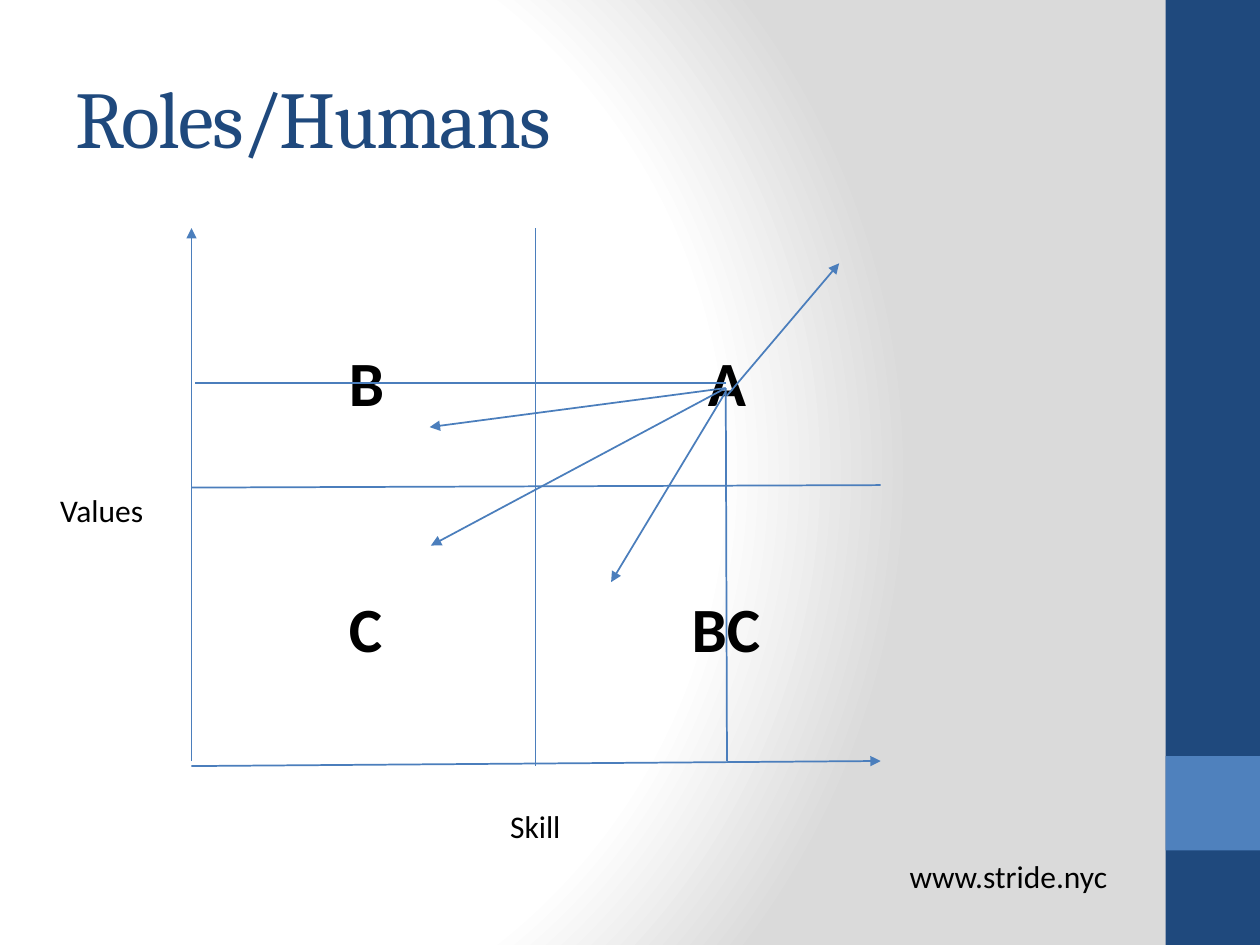
"""Build the Roles/Humans slide: a skill and values quadrant chart."""
import pptx
import pptx.dml.color
import pptx.enum.shapes
import pptx.enum.text
import pptx.oxml
import pptx.oxml.ns
import pptx.util
from lxml import etree

Inches = pptx.util.Inches
RGBColor = pptx.dml.color.RGBColor
qn = pptx.oxml.ns.qn

NAVY = RGBColor(0x1F, 0x49, 0x7D)
BLUE = RGBColor(0x4F, 0x81, 0xBD)
LINE = RGBColor(0x4B, 0x7E, 0xBC)
BLACK = RGBColor(0, 0, 0)
WHITE = RGBColor(0xFF, 0xFF, 0xFF)
GREY = RGBColor(0xDA, 0xDA, 0xDA)


class SlideBuilder:
    heading_font = "Cambria"
    body_font = "Calibri"

    def __init__(self, deck):
        self.slide = deck.slides.add_slide(deck.slide_layouts[5])
        self.shapes = self.slide.shapes

    def background(self, stops):
        self.slide.background.fill.gradient()
        gradient = self.slide.element.find(".//" + qn("a:gradFill"))
        stop_xml = "".join(
            f'<a:gs pos="{percent * 1000}"><a:srgbClr val="{color}"/></a:gs>'
            for percent, color in stops
        )
        radial = pptx.oxml.parse_xml(
            f'<a:gradFill {pptx.oxml.ns.nsdecls("a")} rotWithShape="1">'
            f"<a:gsLst>{stop_xml}</a:gsLst>"
            '<a:path path="circle">'
            '<a:fillToRect l="20000" t="50000" r="100000" b="50000"/>'
            "</a:path></a:gradFill>"
        )
        gradient.getparent().replace(gradient, radial)

    def bar(self, left, top, width, height, color):
        kind = pptx.enum.shapes.MSO_SHAPE.RECTANGLE
        shape = self.shapes.add_shape(
            kind, Inches(left), Inches(top), Inches(width), Inches(height)
        )
        shape.shadow.inherit = False
        shape.fill.solid()
        shape.fill.fore_color.rgb = color
        shape.line.fill.background()

    def span(self, para, text, font, size, color, bold=False):
        span = para.add_run()
        span.text = text
        span.font.name = font
        span.font.size = pptx.util.Pt(size)
        span.font.color.rgb = color
        span.font.bold = bold
        return span

    def title(self, text, left, top, width, height):
        box = self.shapes.title
        box.left, box.top = Inches(left), Inches(top)
        box.width, box.height = Inches(width), Inches(height)
        frame = box.text_frame
        frame.vertical_anchor = pptx.enum.text.MSO_ANCHOR.MIDDLE
        para = frame.paragraphs[0]
        para.alignment = pptx.enum.text.PP_ALIGN.LEFT
        span = self.span(para, text, self.heading_font, 46, NAVY)
        span._r.get_or_add_rPr().set("spc", "-100")

    def label(self, text, left, top, width, height=0.4, size=18, bold=False):
        box = self.shapes.add_textbox(
            Inches(left), Inches(top), Inches(width), Inches(height)
        )
        frame = box.text_frame
        frame.word_wrap = False
        frame.auto_size = pptx.enum.text.MSO_AUTO_SIZE.SHAPE_TO_FIT_TEXT
        self.span(frame.paragraphs[0], text, self.body_font, size, BLACK, bold)

    def line(self, start, end, arrow=False, shapes=None):
        connector = (shapes or self.shapes).add_connector(
            pptx.enum.shapes.MSO_CONNECTOR.STRAIGHT,
            *(Inches(value) for value in (*start, *end)),
        )
        connector.line.color.rgb = LINE
        connector.line.width = pptx.util.Pt(1)
        properties = connector.element.spPr
        if arrow:
            outline = properties.find(qn("a:ln"))
            etree.SubElement(outline, qn("a:tailEnd"), type="triangle")
        etree.SubElement(properties, qn("a:effectLst"))

    def guides(self, *segments):
        group = self.shapes.add_group_shape()
        for start, end in segments:
            self.line(start, end, shapes=group.shapes)


def main():
    deck = pptx.Presentation()
    deck.slide_width, deck.slide_height = Inches(10), Inches(7.5)
    page = SlideBuilder(deck)

    page.background([(0, WHITE), (75, WHITE), (100, GREY)])
    page.bar(9.25, 0, 0.75, 7.5, NAVY)
    page.bar(9.25, 6, 0.75, 0.75, BLUE)
    page.label("www.stride.nyc", 7.12, 6.75, 1.81)
    page.title("Roles/Humans", 0.5, 0.3, 8.33, 1.25)

    page.line((4.25, 1.81), (4.25, 6.08))
    page.line((1.52, 3.87), (6.99, 3.85))

    upper, lower = 2.68, 4.63
    for text, left, top, width in (
        ("A", 5.52, upper, 0.51),
        ("BC", 5.39, lower, 0.75),
        ("C", 2.67, lower, 0.47),
        ("B", 2.67, upper, 0.48),
    ):
        page.label(text, left, top, width, height=0.71, size=36, bold=True)

    page.line((1.52, 6.04), (1.52, 1.81), arrow=True)
    page.line((1.52, 6.08), (6.99, 6.04), arrow=True)
    page.label("Skill", 3.95, 6.36, 0.61)
    page.label("Values", 0.38, 3.85, 0.87)

    page.guides(((5.77, 6.04), (5.76, 3.08)), ((5.76, 3.04), (1.55, 3.04)))
    for start, end in (
        ((5.76, 3.08), (3.41, 3.39)),
        ((5.76, 3.08), (3.42, 4.33)),
        ((5.76, 3.11), (4.85, 4.62)),
        ((5.77, 3.14), (6.66, 2.09)),
    ):
        page.line(start, end, arrow=True)

    deck.save("out.pptx")


if __name__ == "__main__":
    main()
